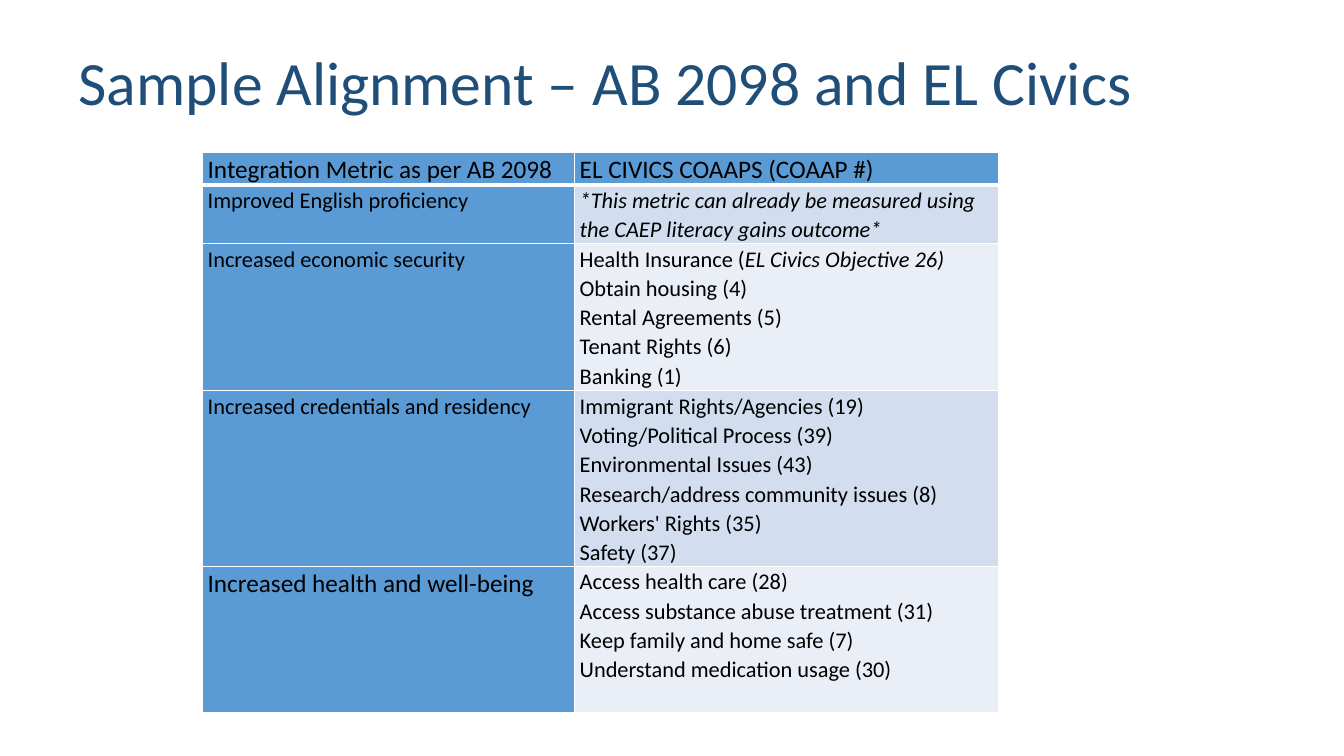
from lxml.etree import SubElement
from pptx import Presentation
from pptx.dml.color import RGBColor
from pptx.enum.text import MSO_ANCHOR, PP_ALIGN
from pptx.oxml.ns import qn
from pptx.util import Inches, Pt

NAVY = RGBColor(0x1F, 0x4E, 0x79)
BLUE = RGBColor(0x5B, 0x9B, 0xD5)
BAND_DARK = RGBColor(0xD2, 0xDE, 0xEF)
BAND_LIGHT = RGBColor(0xEA, 0xEF, 0xF7)
BLACK = RGBColor(0, 0, 0)
WHITE = RGBColor(0xFF, 0xFF, 0xFF)

TITLE = "Sample Alignment – AB 2098 and EL Civics"
TITLE_BOX = (0.68, 0.15, 11.5, 1.4)
TABLE_BOX = (2.01, 1.51, 7.89, 5.55)
COLUMN_SHARES = (3.69, 4.2)
ROW_SHARES = (0.32, 0.58, 1.46, 1.74, 1.45)
HEADER = ("Integration Metric as per AB 2098", "EL CIVICS COAAPS (COAAP #)")
METRICS = [
    ("Improved English proficiency", 16, [
        [("*This metric can already be measured using the CAEP literacy gains outcome*", True)]]),
    ("Increased economic security", 16, [
        [("Health Insurance (", False), ("EL Civics Objective 26)", True)],
        "Obtain housing (4)", "Rental Agreements (5)", "Tenant Rights (6)", "Banking (1)"]),
    ("Increased credentials and residency", 16, [
        "Immigrant Rights/Agencies (19)", "Voting/Political Process (39)",
        "Environmental Issues (43)", "Research/address community issues (8)",
        "Workers' Rights (35)", "Safety (37)"]),
    ("Increased health and well-being", 18, [
        "Access health care (28)", "Access substance abuse treatment (31)",
        "Keep family and home safe (7)", "Understand medication usage (30)"]),
]


def set_all(obj, values):
    for name, value in values.items():
        setattr(obj, name, value)


def add_run(p, text, size, color, italic=False):
    r = p.add_run()
    r.text = text
    set_all(r.font, dict(name="Calibri", size=Pt(size), bold=False, italic=italic))
    r.font.color.rgb = color


def add_borders(cell, bottom):
    tcPr = cell._tc.get_or_add_tcPr()
    widths = {"a:lnL": 1, "a:lnR": 1, "a:lnT": 1, "a:lnB": bottom}
    for i, (tag, width) in enumerate(widths.items()):
        ln = SubElement(tcPr, qn(tag), w=str(Pt(width)))
        fill = SubElement(ln, qn("a:solidFill"))
        SubElement(fill, qn("a:srgbClr"), val=str(WHITE))
        tcPr.insert(i, ln)


def fill_cell(cell, lines, size, color, bottom=1):
    set_all(cell, dict(margin_left=Inches(0.05), margin_right=Inches(0.05),
                       margin_top=0, margin_bottom=0, vertical_anchor=MSO_ANCHOR.TOP))
    cell.fill.solid()
    cell.fill.fore_color.rgb = color
    add_borders(cell, bottom)
    tf = cell.text_frame
    for i, line in enumerate(lines):
        p = tf.add_paragraph() if i else tf.paragraphs[0]
        p.line_spacing = 1.07
        for text, italic in [(line, False)] if isinstance(line, str) else line:
            add_run(p, text, size, BLACK, italic)


def add_title(s, box):
    sp = s.shapes.title
    set_all(sp, dict(zip(("left", "top", "width", "height"), map(Inches, box))))
    tf = sp.text_frame
    set_all(tf, dict(word_wrap=True, vertical_anchor=MSO_ANCHOR.MIDDLE))
    p = tf.paragraphs[0]
    set_all(p, dict(alignment=PP_ALIGN.LEFT, line_spacing=0.9))
    add_run(p, TITLE, 44, NAVY)


def add_alignment_table(s, box):
    rows, cols = len(ROW_SHARES), len(COLUMN_SHARES)
    table = s.shapes.add_table(rows, cols, *map(Inches, box)).table
    for column, share in zip(table.columns, COLUMN_SHARES):
        column.width = Inches(box[2] * share / sum(COLUMN_SHARES))
    for row, share in zip(table.rows, ROW_SHARES):
        row.height = Inches(box[3] * share / sum(ROW_SHARES))
    for col, text in enumerate(HEADER):
        fill_cell(table.cell(0, col), [text], 18, BLUE, bottom=3)
    for row, (metric, size, coaaps) in enumerate(METRICS, 1):
        fill_cell(table.cell(row, 0), [metric], size, BLUE)
        fill_cell(table.cell(row, 1), coaaps, 16, BAND_DARK if row % 2 else BAND_LIGHT)


def main():
    prs = Presentation()
    set_all(prs, dict(slide_width=Inches(13.33), slide_height=Inches(7.5)))
    s = prs.slides.add_slide(prs.slide_layouts[5])
    add_title(s, TITLE_BOX)
    add_alignment_table(s, TABLE_BOX)
    prs.save("out.pptx")


if __name__ == "__main__":
    main()
